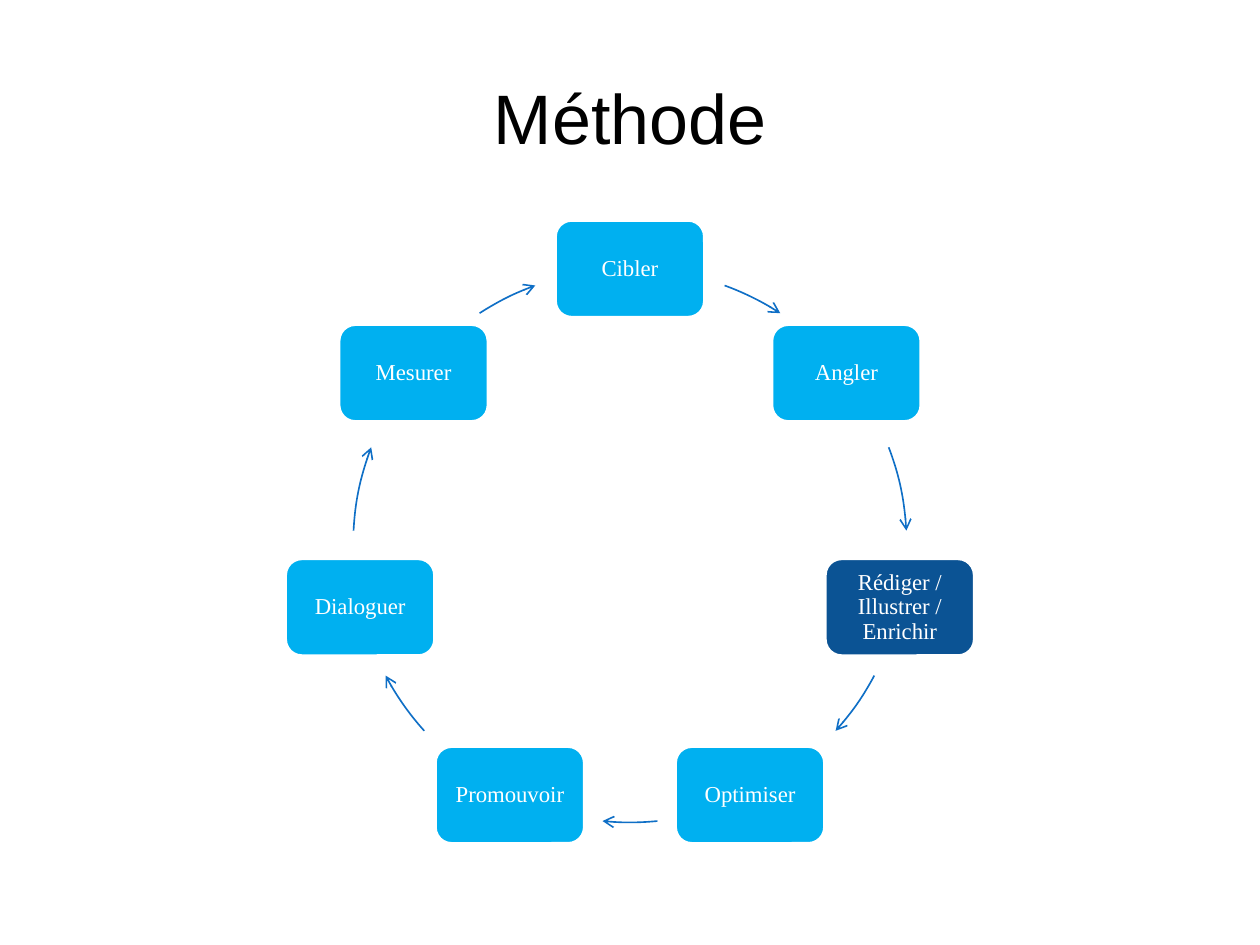
from dataclasses import dataclass
from math import cos, pi, sin

from lxml.etree import SubElement
from pptx import Presentation
from pptx.dml.color import RGBColor
from pptx.enum.shapes import MSO_SHAPE
from pptx.enum.text import MSO_ANCHOR, PP_ALIGN
from pptx.oxml.ns import qn
from pptx.util import Cm, Pt


@dataclass(frozen=True)
class Theme:
    ink: RGBColor = RGBColor(0, 0, 0)
    white: RGBColor = RGBColor(255, 255, 255)
    step: RGBColor = RGBColor.from_string("00B0F0")
    focus: RGBColor = RGBColor.from_string("0B5394")
    arrow: RGBColor = RGBColor.from_string("0F6FC6")
    head: Pt = Pt(40)
    body: Pt = Pt(13)
    edge: Pt = Pt(1.5)
    thin: Pt = Pt(0.94)


THEME = Theme()
STEPS = ["Cibler", "Angler", "Rédiger / Illustrer / Enrichir", "Optimiser",
         "Promouvoir", "Dialoguer", "Mesurer"]
FOCUS = 2
STEP_W, STEP_H = 3, 1.95
# Arrow spans in degrees clockwise from the top; the left half mirrors the right
RIGHT = [(20, 32.9), (69.2, 86.9), (118, 132)]
SPANS = RIGHT + [(174.3, 185.7)] + [(360 - b, 360 - a) for a, b in RIGHT[::-1]]


def apply(item, form):
    for name, value in form.items():
        setattr(item, name, value)


def write(frame, text, font, size, color, **form):
    """Fill a text frame with one centred paragraph."""
    apply(frame, {"word_wrap": True, "vertical_anchor": MSO_ANCHOR.MIDDLE})
    para = frame.paragraphs[0]
    para.text = text
    apply(para, {"alignment": PP_ALIGN.CENTER, **form})
    apply(para.font, {"name": font, "size": size})
    para.font.color.rgb = color


def title(slide, text, left, top, width, height):
    box = slide.shapes.title
    apply(box, {"left": Cm(left), "top": Cm(top),
                "width": Cm(width), "height": Cm(height)})
    write(box.text_frame, text, "Arial", THEME.head, THEME.ink)


def step(shapes, text, fill, x, y):
    """Draw a rounded step box centred on x, y."""
    box = shapes.add_shape(MSO_SHAPE.ROUNDED_RECTANGLE,
                           Cm(x - STEP_W / 2), Cm(y - STEP_H / 2),
                           Cm(STEP_W), Cm(STEP_H))
    box.shadow.inherit = False
    box.fill.solid()
    box.fill.fore_color.rgb = fill
    box.line.color.rgb = THEME.white
    box.line.width = THEME.edge
    sides = ("left", "top", "right", "bottom")
    apply(box.text_frame, {f"margin_{side}": Cm(0.1) for side in sides})
    write(box.text_frame, text, "Times New Roman", THEME.body, THEME.white,
          line_spacing=0.9)


def arrow(shapes, span, left, top, size):
    """Draw one arc of the ring, with an arrowhead at its end."""
    arc = shapes.add_shape(MSO_SHAPE.ARC, Cm(left), Cm(top), Cm(size), Cm(size))
    for i, angle in enumerate(span):
        # Arc angles start at the right; 0.6 turns degrees into adjustment units
        arc.adjustments[i] = (angle - 90) % 360 * 0.6
    arc.shadow.inherit = False
    arc.fill.background()
    arc.line.color.rgb = THEME.arrow
    arc.line.width = THEME.thin
    line = arc.element.spPr.find(qn("a:ln"))
    SubElement(line, qn("a:tailEnd"), type="arrow")


def ring(slide, left, top, size):
    """Place the steps and arrows on the circle that fills the given square."""
    shapes = slide.shapes.add_group_shape().shapes
    rad = size / 2
    for i, (text, span) in enumerate(zip(STEPS, SPANS)):
        turn = 2 * pi * i / len(STEPS)
        fill = THEME.focus if i == FOCUS else THEME.step
        step(shapes, text, fill,
             left + rad * (1 + sin(turn)), top + rad * (1 - cos(turn)))
        arrow(shapes, span, left, top, size)


def main():
    deck = Presentation()
    apply(deck, {"slide_width": Cm(25.4), "slide_height": Cm(19.05)})
    slide = deck.slides.add_slide(deck.slide_layouts[5])
    title(slide, "Méthode", 1.27, 0.76, 22.86, 3.18)
    ring(slide, 7.12, 5.42, 11.16)
    deck.save("out.pptx")


if __name__ == "__main__":
    main()
